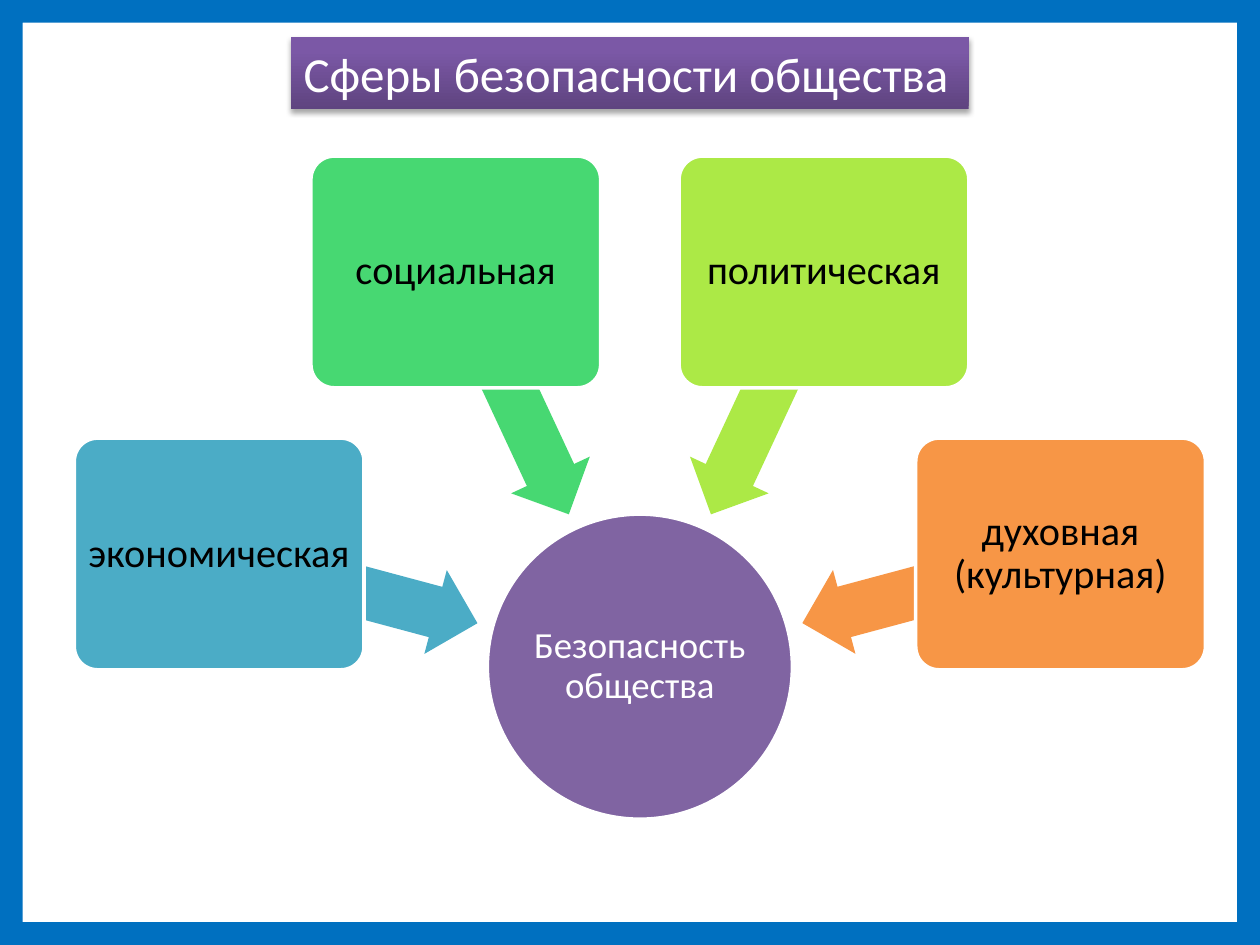
from math import cos, radians, sin
from copy import deepcopy

from lxml.etree import SubElement
from pptx import Presentation
from pptx.dml.color import RGBColor
from pptx.enum.shapes import MSO_SHAPE
from pptx.enum.text import MSO_ANCHOR, PP_ALIGN
from pptx.oxml.ns import qn
from pptx.util import Cm, Pt

WHITE = RGBColor(0xFF, 0xFF, 0xFF)
BLACK = RGBColor(0, 0, 0)
BLUE = RGBColor(0x00, 0x70, 0xC0)
PURPLE = RGBColor(0x80, 0x64, 0xA2)
TEAL = RGBColor(0x4B, 0xAC, 0xC6)
GREEN = RGBColor(0x47, 0xD8, 0x72)
LIME = RGBColor(0xAC, 0xE9, 0x46)
ORANGE = RGBColor(0xF7, 0x96, 0x46)
TITLE_STOPS = [
    (0, RGBColor(0x5F, 0x44, 0x80)),
    (0.8, RGBColor(0x7B, 0x58, 0xA6)),
    (1, RGBColor(0x7C, 0x57, 0xA8)),
]

# Lengths in centimetres, angles in degrees clockwise from the right
HUB_X, HUB_Y, HUB_SIZE = 12.9, 13.44, 6.15
ARROW_RADIUS, ARROW_SIZE = 6.08, (5.38, 1.75)
CARD_RADIUS, CARD_SIZE = 8.78, (5.84, 4.67)
SPHERES = [
    ("экономическая", 195, TEAL),
    ("социальная", 245, GREEN),
    ("политическая", 295, LIME),
    ("духовная (культурная)", 345, ORANGE),
]


def add_block(slide, kind, left, top, width, height, color=None, outlined=False):
    shape = slide.shapes.add_shape(kind, Cm(left), Cm(top), Cm(width), Cm(height))
    shape.shadow.inherit = False
    if color is not None:
        shape.fill.solid()
        shape.fill.fore_color.rgb = color
    if outlined:
        shape.line.color.rgb = WHITE
        shape.line.width = Pt(2)
    else:
        shape.line.fill.background()
    return shape


def add_radial_block(slide, kind, angle, radius, size, color, outlined=False):
    """Centre a block at the given angle and distance from the hub."""
    width, height = size
    left = HUB_X + radius * cos(radians(angle)) - width / 2
    top = HUB_Y + radius * sin(radians(angle)) - height / 2
    return add_block(slide, kind, left, top, width, height, color, outlined)


def write_text(shape, text, *, size, color, align=PP_ALIGN.CENTER,
               line_spacing=0.9, margin_x=0.13, margin_y=0.13):
    frame = shape.text_frame
    frame.word_wrap = True
    frame.vertical_anchor = MSO_ANCHOR.MIDDLE
    frame.margin_left = frame.margin_right = Cm(margin_x)
    frame.margin_top = frame.margin_bottom = Cm(margin_y)
    paragraph = frame.paragraphs[0]
    paragraph.text = text
    paragraph.alignment = align
    paragraph.line_spacing = line_spacing
    paragraph.font.name = "Calibri"
    paragraph.font.size = Pt(size)
    paragraph.font.color.rgb = color


def apply_gradient(shape, stops, angle):
    shape.fill.gradient()
    shape.fill.gradient_angle = angle
    stop_list = shape._element.spPr.find(qn("a:gradFill")).find(qn("a:gsLst"))
    while len(stop_list) < len(stops):
        stop_list.append(deepcopy(stop_list[0]))
    for stop, (position, color) in zip(shape.fill.gradient_stops, stops):
        stop.position = position
        stop.color.rgb = color


def add_drop_shadow(shape):
    effects = shape._element.spPr.find(qn("a:effectLst"))
    shadow = SubElement(effects, qn("a:outerShdw"), blurRad=str(Pt(3.1)),
                        dist=str(Pt(1.8)), dir="5400000", rotWithShape="0")
    color = SubElement(shadow, qn("a:srgbClr"), val="000000")
    SubElement(color, qn("a:alpha"), val="35000")


def add_title(slide):
    title = add_block(slide, MSO_SHAPE.RECTANGLE, 5.87, 0.74, 13.66, 1.45)
    apply_gradient(title, TITLE_STOPS, 90)
    add_drop_shadow(title)
    write_text(title, "Сферы безопасности общества", size=28, color=WHITE,
               align=PP_ALIGN.LEFT, line_spacing=1, margin_x=0.25)


def add_hub(slide):
    hub = add_block(slide, MSO_SHAPE.OVAL, HUB_X - HUB_SIZE / 2,
                    HUB_Y - HUB_SIZE / 2, HUB_SIZE, HUB_SIZE, PURPLE, outlined=True)
    write_text(hub, "Безопасность общества", size=21, color=WHITE,
               margin_x=0.03, margin_y=0.03)


def add_sphere(slide, text, angle, color):
    """Add a card and the arrow that leads from it to the hub."""
    arrow = add_radial_block(slide, MSO_SHAPE.LEFT_ARROW, angle, ARROW_RADIUS,
                             ARROW_SIZE, color)
    arrow.adjustments[0] = 0.6
    arrow.rotation = angle
    card = add_radial_block(slide, MSO_SHAPE.ROUNDED_RECTANGLE, angle, CARD_RADIUS,
                            CARD_SIZE, color, outlined=True)
    card.adjustments[0] = 0.1
    write_text(card, text, size=23, color=BLACK)


def main():
    presentation = Presentation()
    presentation.slide_width, presentation.slide_height = Cm(25.4), Cm(19.05)
    slide = presentation.slides.add_slide(presentation.slide_layouts[6])
    border = add_block(slide, MSO_SHAPE.FRAME, 0, 0, 25.4, 19.05, BLUE)
    border.adjustments[0] = 0.024
    add_title(slide)
    add_hub(slide)
    for text, angle, color in SPHERES:
        add_sphere(slide, text, angle, color)
    presentation.save("out.pptx")


if __name__ == "__main__":
    main()
